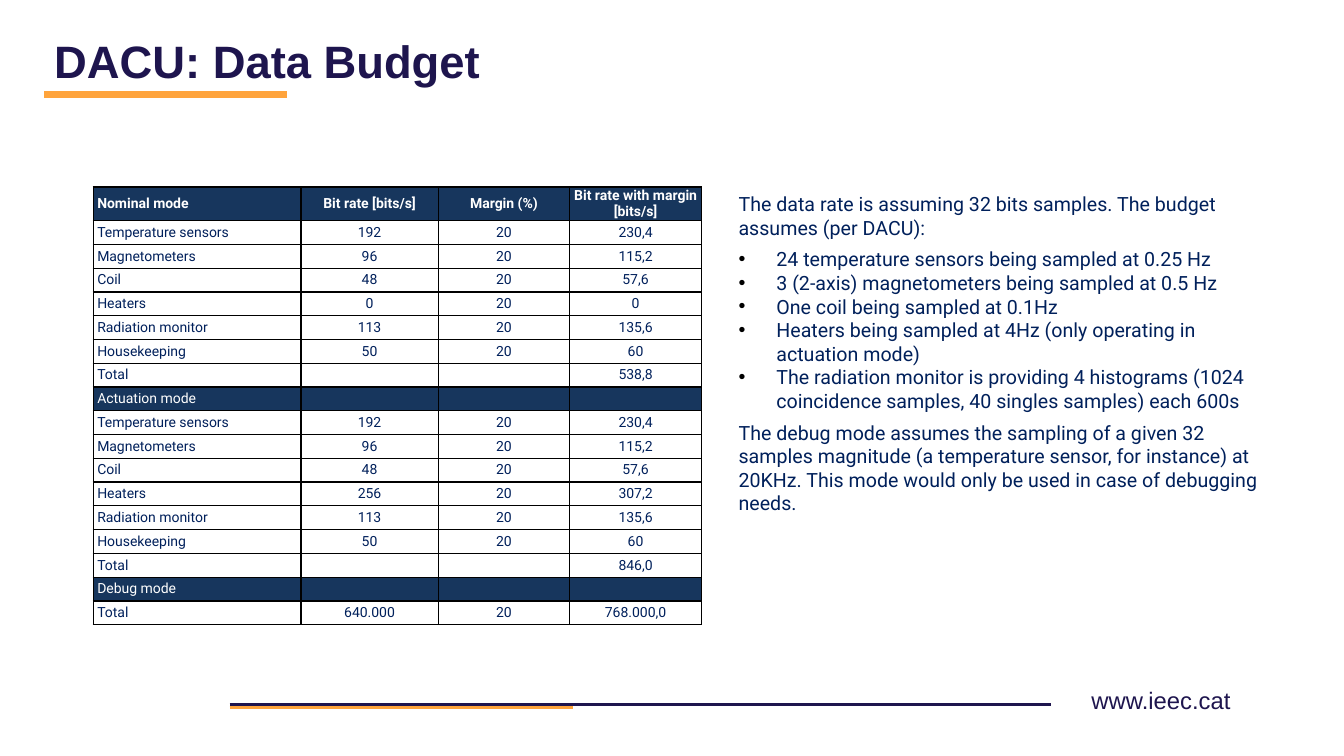
from lxml.etree import SubElement
from pptx import Presentation
from pptx.dml.color import RGBColor
from pptx.enum.shapes import MSO_CONNECTOR
from pptx.enum.text import MSO_ANCHOR, MSO_AUTO_SIZE, PP_ALIGN
from pptx.oxml.ns import qn
from pptx.util import Pt

PX = 6350  # 144 px to the inch
INDIGO, ORANGE, NAVY, BAND = "1E154E", "FFA43C", "00205B", "17365D"
WHITE, BLACK = "FFFFFF", "000000"

COLUMN_WIDTHS = [297, 196, 188, 188]
HEADER_HEIGHT, ROW_HEIGHT = 48, 34
HEADER = ["Nominal mode", "Bit rate [bits/s]", "Margin (%)", "Bit rate with margin [bits/s]"]


def mode_rows(heater_rate, heater_with_margin, total):
    return [
        ["Temperature sensors", "192", "20", "230,4"],
        ["Magnetometers", "96", "20", "115,2"],
        ["Coil", "48", "20", "57,6"],
        ["Heaters", heater_rate, "20", heater_with_margin],
        ["Radiation monitor", "113", "20", "135,6"],
        ["Housekeeping", "50", "20", "60"],
        ["Total", "", "", total],
    ]


BUDGET = [
    HEADER,
    *mode_rows("0", "0", "538,8"),
    ["Actuation mode", "", "", ""],
    *mode_rows("256", "307,2", "846,0"),
    ["Debug mode", "", "", ""],
    ["Total", "640.000", "20", "768.000,0"],
]

# Text, whether it is bulleted, space before in points
ASSUMPTIONS = [
    ("The data rate is assuming 32 bits samples. The budget assumes (per DACU):", False, 0),
    ("24 temperature sensors being sampled at 0.25 Hz", True, 6),
    ("3 (2-axis) magnetometers being sampled at 0.5 Hz", True, 0),
    ("One coil being sampled at 0.1Hz", True, 0),
    ("Heaters being sampled at 4Hz (only operating in actuation mode)", True, 0),
    ("The radiation monitor is providing 4 histograms (1024 coincidence samples, "
     "40 singles samples) each 600s", True, 0),
    ("The debug mode assumes the sampling of a given 32 samples magnitude (a temperature "
     "sensor, for instance) at 20KHz. This mode would only be used in case of debugging "
     "needs.", False, 6),
]


def rgb(value):
    return RGBColor.from_string(value)


def add_bullet(paragraph, indent):
    properties = paragraph._p.get_or_add_pPr()
    properties.set("marL", str(indent * PX))
    properties.set("indent", str(-indent * PX))
    color = SubElement(properties, qn("a:buClr"))
    SubElement(color, qn("a:srgbClr"), val=BLACK)
    SubElement(properties, qn("a:buFont"), typeface="Arial")
    SubElement(properties, qn("a:buChar"), char="•")


def add_borders(cell):
    properties = cell._tc.get_or_add_tcPr()
    for side in ("lnL", "lnR", "lnT", "lnB"):
        border = SubElement(properties, qn(f"a:{side}"), w=str(Pt(1)))
        fill = SubElement(border, qn("a:solidFill"))
        SubElement(fill, qn("a:srgbClr"), val=BLACK)


class SlideBuilder:
    heading_font, body_font = "Arial", "Roboto"

    def __init__(self, slide):
        self.slide = slide

    def run(self, paragraph, text, font, size, color, bold=False):
        run = paragraph.add_run()
        run.text = text
        run.font.name, run.font.size, run.font.bold = font, Pt(size), bold
        run.font.color.rgb = rgb(color)

    def title(self, text, left, top, width, height):
        title = self.slide.shapes.title
        title.left, title.top = left * PX, top * PX
        title.width, title.height = width * PX, height * PX
        frame = title.text_frame
        frame.auto_size = MSO_AUTO_SIZE.NONE
        frame.vertical_anchor = MSO_ANCHOR.MIDDLE
        paragraph = frame.paragraphs[0]
        paragraph.alignment = PP_ALIGN.LEFT
        paragraph.line_spacing = 0.9
        self.run(paragraph, text, self.heading_font, 32.4, INDIGO, bold=True)

    def rule(self, left, right, y, color, weight):
        line = self.slide.shapes.add_connector(
            MSO_CONNECTOR.STRAIGHT, left * PX, y * PX, right * PX, y * PX)
        line.line.color.rgb = rgb(color)
        line.line.width = Pt(weight)
        SubElement(line._element.spPr, qn("a:effectLst"))

    def text_box(self, left, top, width, height):
        """Add a wrapping box and return its text frame."""
        box = self.slide.shapes.add_textbox(left * PX, top * PX, width * PX, height * PX)
        box.text_frame.word_wrap = True
        return box.text_frame

    def web_address(self, text, *place):
        paragraph = self.text_box(*place).paragraphs[0]
        self.run(paragraph, text, self.heading_font, 17, INDIGO)

    def body_text(self, items, *place):
        frame = self.text_box(*place)
        for index, (text, bulleted, space) in enumerate(items):
            paragraph = frame.add_paragraph() if index else frame.paragraphs[0]
            paragraph.space_before = Pt(space)
            if bulleted:
                add_bullet(paragraph, 54)
            self.run(paragraph, text, self.body_font, 14, NAVY)

    def table(self, rows, left, top):
        height = HEADER_HEIGHT + ROW_HEIGHT * (len(rows) - 1)
        table = self.slide.shapes.add_table(
            len(rows), len(COLUMN_WIDTHS), left * PX, top * PX,
            sum(COLUMN_WIDTHS) * PX, height * PX).table
        table.first_row = table.horz_banding = False
        for column, width in zip(table.columns, COLUMN_WIDTHS):
            column.width = width * PX
        for row_index, values in enumerate(rows):
            header = row_index == 0
            band = values[0].endswith("mode")
            table.rows[row_index].height = (HEADER_HEIGHT if header else ROW_HEIGHT) * PX
            for column_index, text in enumerate(values):
                cell = table.cell(row_index, column_index)
                white = values[0] == "Total" and column_index >= 2
                fill = BAND if band else WHITE if white else None
                self.cell(cell, text, fill, WHITE if band else NAVY, header,
                          PP_ALIGN.CENTER if column_index else PP_ALIGN.LEFT)

    def cell(self, cell, text, fill, color, bold, alignment):
        cell.margin_left = cell.margin_right = 6 * PX
        cell.margin_top = cell.margin_bottom = 0
        cell.vertical_anchor = MSO_ANCHOR.MIDDLE
        add_borders(cell)
        if fill:
            cell.fill.solid()
            cell.fill.fore_color.rgb = rgb(fill)
        else:
            cell.fill.background()
        paragraph = cell.text_frame.paragraphs[0]
        paragraph.alignment = alignment
        if text:
            self.run(paragraph, text, self.body_font, 10, color, bold)
        else:
            # Keeps an empty cell from stretching its row
            SubElement(paragraph._p, qn("a:endParaRPr"), sz="1000")


def main():
    presentation = Presentation()
    presentation.slide_width, presentation.slide_height = 1920 * PX, 1080 * PX
    slide = presentation.slides.add_slide(presentation.slide_layouts[5])
    builder = SlideBuilder(slide)
    builder.web_address("www.ieec.cat", 1545, 973, 235, 56)
    builder.rule(328, 1502, 1007, INDIGO, 2.25)
    builder.rule(328, 819, 1011, ORANGE, 2.25)
    builder.rule(63, 410, 135, ORANGE, 4.5)
    builder.title("DACU: Data Budget", 63, 52, 1724, 78)
    builder.table(BUDGET, 133, 267)
    builder.body_text(ASSUMPTIONS, 1041, 267, 780, 480)
    presentation.save("out.pptx")


if __name__ == "__main__":
    main()
